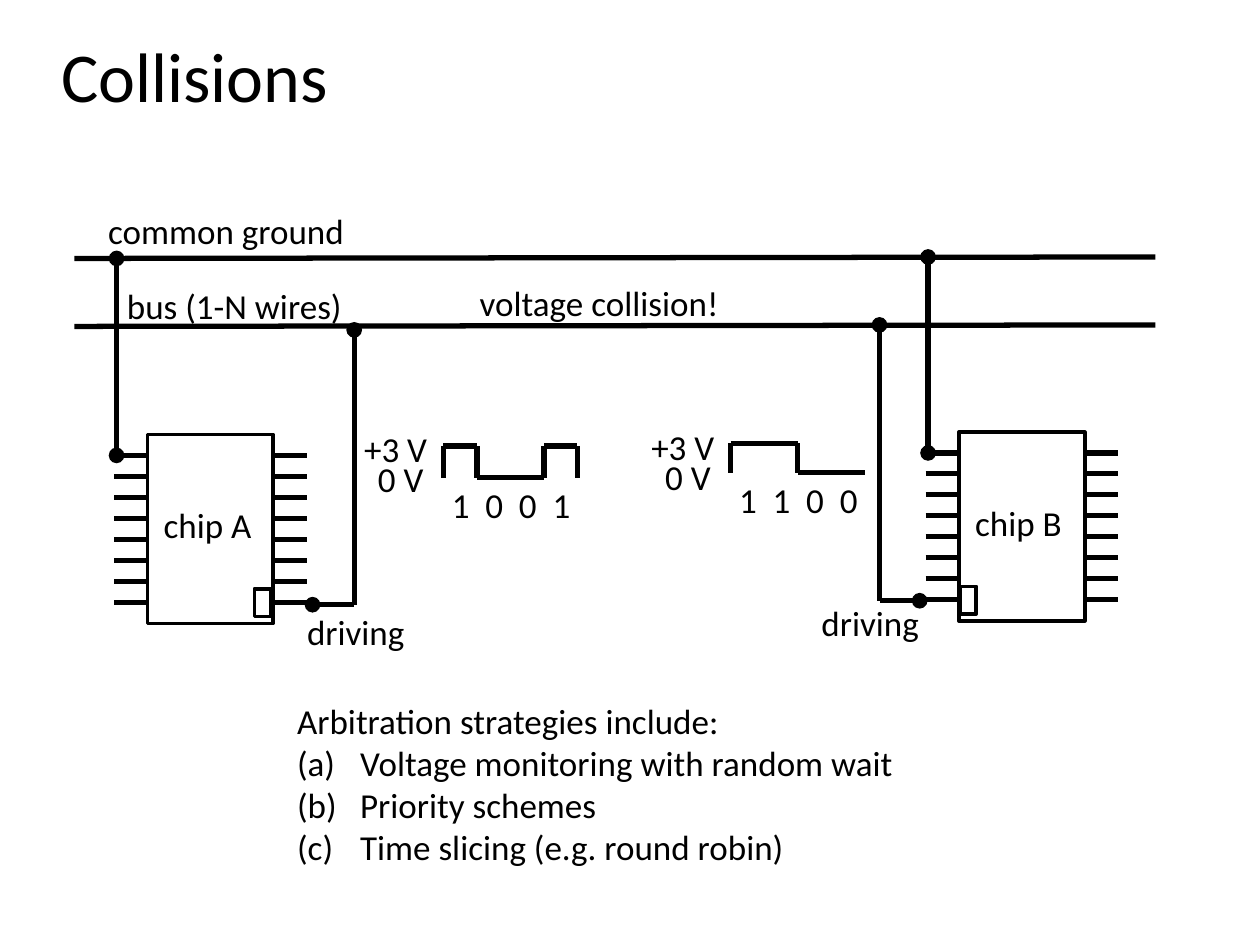
from dataclasses import dataclass

from lxml.etree import SubElement
from pptx import Presentation
from pptx.dml.color import RGBColor
from pptx.enum.shapes import MSO_CONNECTOR, MSO_SHAPE
from pptx.oxml.ns import qn
from pptx.util import Cm, Pt


@dataclass(frozen=True)
class Theme:
    font: str = "Calibri"
    ink: RGBColor = RGBColor(0, 0, 0)
    title: Pt = Pt(40)
    body: Pt = Pt(20)
    wire: Pt = Pt(3)
    outline: Pt = Pt(2)


theme = Theme()
deck = Presentation()
deck.slide_width, deck.slide_height = Cm(25.4), Cm(19.05)
page = deck.slides.add_slide(deck.slide_layouts[6])


def add_wire(x1, y1, x2, y2, dots=()):
    wire = page.shapes.add_connector(MSO_CONNECTOR.STRAIGHT, Cm(x1), Cm(y1), Cm(x2), Cm(y2))
    wire.line.color.rgb = theme.ink
    wire.line.width = theme.wire
    SubElement(wire._element.spPr, qn("a:effectLst"))
    for end in dots:
        SubElement(wire.line._get_or_add_ln(), qn(f"a:{end}"), type="oval")


def add_label(text, left, top, width, height=1.12, size=theme.body, wrap=False):
    box = page.shapes.add_textbox(Cm(left), Cm(top), Cm(width), Cm(height))
    box.text_frame.word_wrap = wrap
    box.text_frame.text = text
    for para in box.text_frame.paragraphs:
        for span in para.runs:
            span.font.name = theme.font
            span.font.size = size
            span.font.color.rgb = theme.ink
    return box


add_label("Collisions", 0.99, 0.53, 5.94, 1.96, theme.title)

add_wire(1.5, 5.21, 23.29, 5.18)
add_wire(1.5, 6.58, 23.29, 6.55)
for text, left, top, width in [
    ("common ground", 1.93, 4.09, 5.72),
    ("bus (1-N wires)", 2.31, 5.61, 5.72),
    ("voltage collision!", 9.42, 5.56, 5.72),
    ("driving", 5.94, 12.19, 2.95),
    ("driving", 16.31, 12.01, 2.95),
]:
    add_label(text, left, top, width, wrap=True)

chip_width, chip_height = 2.54, 3.81
pin_count, pin_length, first_pin = 8, 0.67, 0.42
pin_pitch = 2.96 / (pin_count - 1)
for name, left, top, port_left, ground_y in [
    ("chip A", 2.97, 8.76, 5.13, 5.21),
    ("chip B", 19.33, 8.71, 19.35, 5.18),
]:
    for x, y, width, height in [
        (left, top, chip_width, chip_height),
        (port_left, top + 3.11, 0.33, 0.56),
    ]:
        outline = page.shapes.add_shape(MSO_SHAPE.RECTANGLE, Cm(x), Cm(y), Cm(width), Cm(height))
        outline.shadow.inherit = False
        outline.fill.background()
        outline.line.color.rgb = theme.ink
        outline.line.width = theme.outline
    for side in (left - pin_length, left + chip_width):
        for pin in range(pin_count):
            y = top + first_pin + pin * pin_pitch
            add_wire(side, y, side + pin_length, y)
    add_wire(left - 0.62, top + first_pin, left - 0.62, ground_y, ("headEnd", "tailEnd"))
    add_label(name, left + 0.08, top + 1.27, 2.45)

for bus_x, bus_y, port_x, foot_y in [(7.14, 6.65, 6.3, 12.19), (17.73, 6.55, 18.54, 12.11)]:
    add_wire(bus_x, bus_y, bus_x, foot_y, ("headEnd",))
    add_wire(port_x, foot_y, bus_x, foot_y, ("headEnd",))

bit_width = 0.675
for bits, left, high, low, width in [
    ("1001", 8.94, 8.99, 9.63, 3.07),
    ("1100", 14.73, 8.94, 9.53, 2.92),
]:
    for index, bit in enumerate(bits):
        x = left + index * bit_width
        y = high if bit == "1" else low
        add_wire(x, y, x + bit_width, y)
    levels = f"0{bits}0"
    for index, (before, after) in enumerate(zip(levels, levels[1:])):
        if before != after:
            x = left + index * bit_width
            add_wire(x, high, x, low)
    add_label("  ".join(bits), left - 0.08, low, width)
    add_label("0 V", left - 1.57, high + 0.11, 1.45)
    add_label("+3 V", left - 1.85, high - 0.49, 1.8)

strategies = [
    "Arbitration strategies include:",
    "Voltage monitoring with random wait",
    "Priority schemes",
    "Time slicing (e.g. round robin)",
]
box = add_label("\n".join(strategies), 5.74, 13.97, 13.44, 3.68, wrap=True)
for para in box.text_frame.paragraphs[1:]:
    properties = para._p.get_or_add_pPr()
    properties.set("marL", str(Cm(1.27)))
    properties.set("indent", str(-Cm(1.27)))
    SubElement(properties, qn("a:buAutoNum"), type="alphaLcParenBoth")

deck.save("out.pptx")
